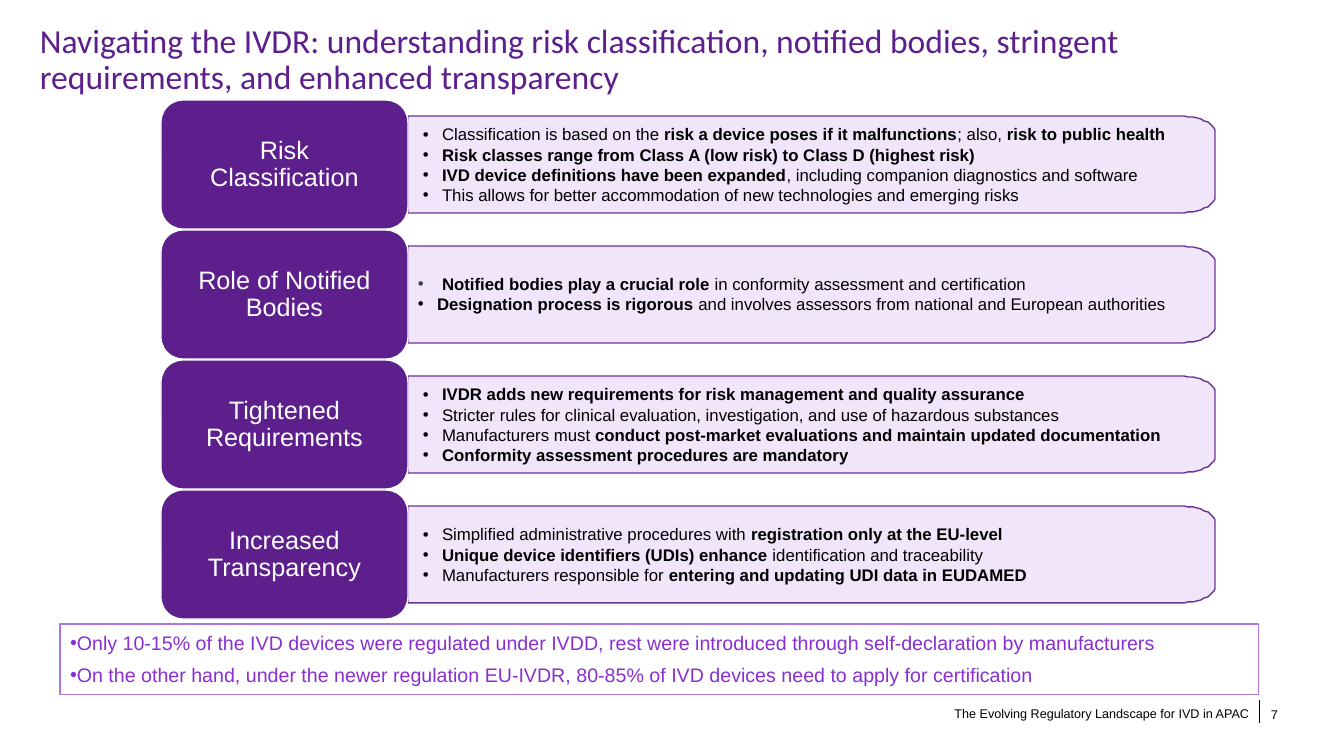
import math
import pptx
import pptx.util
import pptx.dml.color
import pptx.enum.shapes
import pptx.enum.text
import pptx.oxml
import pptx.oxml.ns

RGB = pptx.dml.color.RGBColor
KIND = pptx.enum.shapes.MSO_SHAPE
ALIGN = pptx.enum.text.PP_ALIGN
ANCHOR = pptx.enum.text.MSO_ANCHOR
qn = pptx.oxml.ns.qn
NS = pptx.oxml.ns.nsdecls("a")

SCALE = 914400 / 100.8
PURPLE = RGB(0x5C, 0x1F, 0x8C)
VIOLET = RGB(0x89, 0x2F, 0xD2)
LILAC = RGB(0xB1, 0x75, 0xE1)
PALE = RGB(0xEF, 0xE3, 0xF9)
SLATE = RGB(0x37, 0x41, 0x51)
BLACK = RGB(0, 0, 0)
WHITE = RGB(255, 255, 255)

TITLE = ("Navigating the IVDR: understanding risk classification, notified bodies, "
         "stringent requirements, and enhanced transparency")

# Label and points of each row; text between asterisks is bold
ROWS = [
    ("Risk Classification", [
        "Classification is based on the *risk a device poses if it malfunctions*"
        "; also, *risk to public health*",
        "*Risk classes range from Class A (low risk) to Class D (highest risk)*",
        "*IVD device definitions have been expanded*"
        ", including companion diagnostics and software",
        "This allows for better accommodation of new technologies and emerging risks"]),
    ("Role of Notified Bodies", []),
    ("Tightened Requirements", [
        "*IVDR adds new requirements for risk management and quality assurance*",
        "Stricter rules for clinical evaluation, investigation, "
        "and use of hazardous substances",
        "Manufacturers must *conduct post-market evaluations "
        "and maintain updated documentation*",
        "*Conformity assessment procedures are mandatory*"]),
    ("Increased Transparency", [
        "Simplified administrative procedures with *registration only at the EU-level*",
        "*Unique device identifiers (UDIs) enhance* identification and traceability",
        "Manufacturers responsible for *entering and updating UDI data in EUDAMED*"]),
]

# Text, indent and bullet colour of the points laid over the second row
BODIES = [
    ("*Notified bodies play a crucial role* in conformity assessment "
     "and certification", 24, SLATE),
    ("*Designation process is rigorous* and involves assessors "
     "from national and European authorities", 19, BLACK),
]

NOTES = [
    "Only 10-15% of the IVD devices were regulated under IVDD, "
    "rest were introduced through self-declaration by manufacturers",
    "On the other hand, under the newer regulation EU-IVDR, "
    "80-85% of IVD devices need to apply for certification",
]


def px(num):
    return pptx.util.Emu(round(num * SCALE))


def paint(shape, fill, line, width):
    shape.shadow.inherit = False
    shape.fill.solid()
    shape.fill.fore_color.rgb = fill
    shape.line.color.rgb = line
    shape.line.width = pptx.util.Pt(width)


def fade(shape, share):
    for color in list(shape._element.spPr.iter(qn("a:srgbClr"))):
        color.append(pptx.oxml.parse_xml(f'<a:alpha {NS} val="{share * 1000}"/>'))


def frame(shape, pads=(10, 5, 10, 5), anchor=ANCHOR.TOP):
    text = shape.text_frame
    text.word_wrap = True
    text.vertical_anchor = anchor
    (text.margin_left, text.margin_top,
     text.margin_right, text.margin_bottom) = map(px, pads)
    return text


def box(slide, left, top, width, height, **style):
    return frame(slide.shapes.add_textbox(*map(px, (left, top, width, height))), **style)


def bullet(par, left, hang, tint):
    props = par._p.get_or_add_pPr()
    props.set("marL", str(px(left)))
    props.set("indent", str(px(-hang)))
    for part in (f'<a:buClr {NS}><a:srgbClr val="{tint}"/></a:buClr>',
                 f'<a:buFont {NS} typeface="Arial"/>',
                 f'<a:buChar {NS} char="•"/>'):
        props.append(pptx.oxml.parse_xml(part))


def write(text, words, size, color, font="Arial", align=ALIGN.LEFT,
          lead=None, gap=0, mark=None):
    """Add one paragraph; mark holds the bullet's indent, hang and colour."""
    par = text.paragraphs[0]
    if par.runs:
        par = text.add_paragraph()
        par.space_before = pptx.util.Pt(gap)
    par.alignment = align
    if lead:
        par.line_spacing = lead
    if mark:
        bullet(par, *mark)
    for num, part in enumerate(words.split("*")):
        if part:
            run = par.add_run()
            run.text = part
            run.font.name = font
            run.font.size = pptx.util.Pt(size)
            run.font.bold = num % 2 == 1
            run.font.color.rgb = color


def panel(slide, left, top, width, height, points):
    """Draw a bar with rounded right corners and its bullet points."""
    wide, high = 36, 16
    arc = [(wide * math.sin(turn), high * math.cos(turn))
           for turn in (math.pi / 2 * step / 12 for step in range(13))]
    right, base = left + width, top + height
    upper = [(right - wide + x, top + high - y) for x, y in arc]
    lower = [(right - wide + x, base - high + y) for x, y in reversed(arc)]
    path = slide.shapes.build_freeform(left, top, scale=SCALE)
    path.add_line_segments(upper + lower + [(left, base)], close=True)
    shape = path.convert_to_shape()
    paint(shape, PALE, PURPLE, 1)
    fade(shape, 90)
    text = frame(shape, (15, 15, 23, 15), ANCHOR.MIDDLE)
    for words in points:
        write(text, words, 12, BLACK, mark=(19, 19, BLACK))


def label(slide, left, top, width, height, words):
    shape = slide.shapes.add_shape(KIND.ROUNDED_RECTANGLE,
                                   *map(px, (left, top, width, height)))
    shape.adjustments[0] = 0.17
    paint(shape, PURPLE, WHITE, 1)
    text = frame(shape, (29, 17, 29, 17), ANCHOR.MIDDLE)
    write(text, words, 18, WHITE, align=ALIGN.CENTER, lead=0.9)


def rule(slide, x, top, base):
    line = slide.shapes.add_connector(pptx.enum.shapes.MSO_CONNECTOR.STRAIGHT,
                                      px(x), px(top), px(x), px(base))
    line.line.color.rgb = BLACK
    line.line.width = pptx.util.Pt(0.5)
    line._element.spPr.append(pptx.oxml.parse_xml(f"<a:effectLst {NS}/>"))


def main():
    deck = pptx.Presentation()
    deck.slide_width, deck.slide_height = px(1344), px(756)
    slide = deck.slides.add_slide(deck.slide_layouts[6])

    # Footer
    rule(slide, 1259, 700, 723)
    write(box(slide, 896, 701, 363, 24),
          "The Evolving Regulatory Landscape for IVD in APAC", 9, BLACK, align=ALIGN.RIGHT)
    write(box(slide, 1261, 702, 24, 24, anchor=ANCHOR.MIDDLE), "7", 9, BLACK)

    # Rows of labels and panels
    for num, (name, points) in enumerate(ROWS):
        top = 100 + 130 * num
        panel(slide, 408, top + 16, 807, 97, points)
        label(slide, 161, top, 247, 129, name)

    # Points on notified bodies
    text = box(slide, 408, 269, 807, 50)
    for words, left, tint in BODIES:
        write(text, words, 12, BLACK, mark=(left, left, tint))

    # Title
    write(box(slide, 30, 19, 1238, 87), TITLE, 24, PURPLE, font="Calibri", lead=0.9)

    # Closing notes
    card = slide.shapes.add_shape(KIND.RECTANGLE, *map(px, (60, 624, 1199, 71)))
    paint(card, WHITE, LILAC, 0.75)
    text = box(slide, 60, 626, 1179, 67)
    for words in NOTES:
        write(text, words, 14, VIOLET, gap=6, mark=(0, 19, VIOLET))

    deck.save("out.pptx")


if __name__ == "__main__":
    main()
